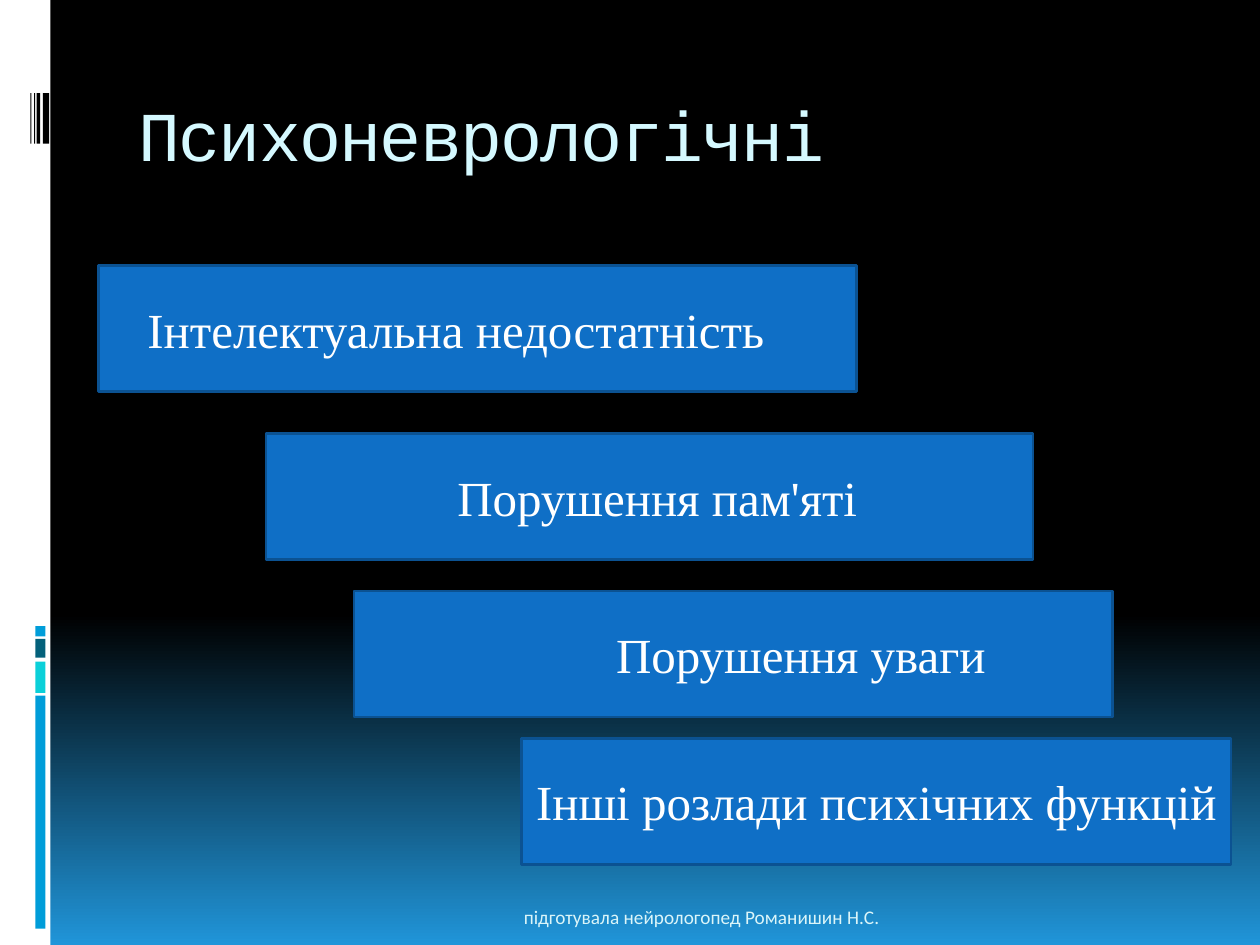
from lxml import etree
from pptx import Presentation
from pptx import util as u
from pptx.dml.color import RGBColor
from pptx.enum import shapes, text

WHITE = RGBColor(0xFF, 0xFF, 0xFF)
BLACK = RGBColor(0x00, 0x00, 0x00)
SKY = RGBColor(0x20, 0x95, 0xD9)
BLUE = RGBColor(0x00, 0x9D, 0xD9)
CYAN = RGBColor(0x0B, 0xD0, 0xD9)
TEAL = RGBColor(0x04, 0x61, 0x7B)
BOX_FILL = RGBColor(0x0F, 0x6F, 0xC6)
BOX_LINE = RGBColor(0x0B, 0x52, 0x92)
TITLE_COLOR = RGBColor(0xD5, 0xF9, 0xFF)
FOOTER_COLOR = RGBColor(0xDB, 0xF5, 0xF9)

BOX_HEIGHT = 1
BAR_LEFT, BAR_WIDTH = 0.28, 0.08
STRIPE_TOP, STRIPE_HEIGHT = 0.74, 0.4

# top and height of each accent bar
ACCENT_BARS = [(5.52, 1.85, BLUE), (5.25, 0.25, CYAN),
               (5.07, 0.15, TEAL), (4.97, 0.08, BLUE)]
# left and width of each barcode stripe
STRIPES = [(0.34, 0.05), (0.29, 0.03), (0.27, 0.01), (0.24, 0.01)]
# left, top, width, text indent (None means centred), wording
DISORDERS = [
    (0.78, 2.11, 6.02, 0.39, "Інтелектуальна недостатність"),
    (2.11, 3.44, 6.09, 1.52, "Порушення пам'яті"),
    (2.81, 4.69, 6.02, 2.08, "Порушення уваги"),
    (4.14, 5.86, 5.63, None, "Інші розлади психічних функцій"),
]


def inches(*lengths):
    return [u.Inches(length) for length in lengths]


def paint_background(slide):
    fill = slide.background.fill
    fill.gradient()
    fill.gradient_angle = 270
    for stop, position, color in zip(fill.gradient_stops, (0.65, 1), (BLACK, SKY)):
        stop.position = position
        stop.color.rgb = color


def add_rectangle(slide, box, fill, line=None):
    shape = slide.shapes.add_shape(shapes.MSO_SHAPE.RECTANGLE, *inches(*box))
    shape.shadow.inherit = False
    shape.fill.solid()
    shape.fill.fore_color.rgb = fill
    if line is None:
        shape.line.fill.background()
    else:
        shape.line.color.rgb = line
        shape.line.width = u.Pt(1.5)
    return shape


def write(shape, wording, size, font_name, color, align, anchor):
    frame = shape.text_frame
    frame.word_wrap = True
    frame.vertical_anchor = anchor
    frame.text = wording
    paragraph = frame.paragraphs[0]
    paragraph.alignment = align
    run = paragraph.runs[0]
    run.font.size = u.Pt(size)
    run.font.name = font_name
    run.font.color.rgb = color
    properties = run.font._element
    for tag in ("ea", "cs"):
        element = etree.SubElement(properties, properties.nsmap["a"].join("{}") + tag)
        element.set("typeface", font_name)
    return run


def add_text(slide, box, *style):
    return write(slide.shapes.add_textbox(*inches(*box)), *style)


def add_disorder(slide, left, top, width, indent, wording):
    shape = add_rectangle(slide, (left, top, width, BOX_HEIGHT), BOX_FILL, BOX_LINE)
    align = text.PP_ALIGN.CENTER
    if indent is not None:
        align = text.PP_ALIGN.LEFT
        shape.text_frame.margin_left = u.Inches(indent)
    write(shape, wording, 28, "Times New Roman", WHITE, align,
          text.MSO_ANCHOR.MIDDLE)


def main():
    presentation = Presentation()
    presentation.slide_width, presentation.slide_height = inches(10, 7.5)
    slide = presentation.slides.add_slide(presentation.slide_layouts[6])
    paint_background(slide)

    # Side band with accent bars and barcode stripes
    add_rectangle(slide, (0, 0, 0.4, 7.5), WHITE)
    for top, height, color in ACCENT_BARS:
        add_rectangle(slide, (BAR_LEFT, top, BAR_WIDTH, height), color)
    for left, width in STRIPES:
        add_rectangle(slide, (left, STRIPE_TOP, width, STRIPE_HEIGHT), BLACK)

    # Title and footer
    title = add_text(slide, (1, 0.56, 8.5, 1), "Психоневрологічні", 40,
                     "Courier New", TITLE_COLOR, text.PP_ALIGN.LEFT,
                     text.MSO_ANCHOR.MIDDLE)
    title.font._element.set("spc", "-100")
    add_text(slide, (1, 7.02, 6.08, 0.4), "підготувала нейрологопед Романишин Н.С.",
             11, "Calibri", FOOTER_COLOR, text.PP_ALIGN.RIGHT,
             text.MSO_ANCHOR.BOTTOM)

    # Staircase of disorders
    for disorder in DISORDERS:
        add_disorder(slide, *disorder)

    presentation.save("out.pptx")


if __name__ == "__main__":
    main()
